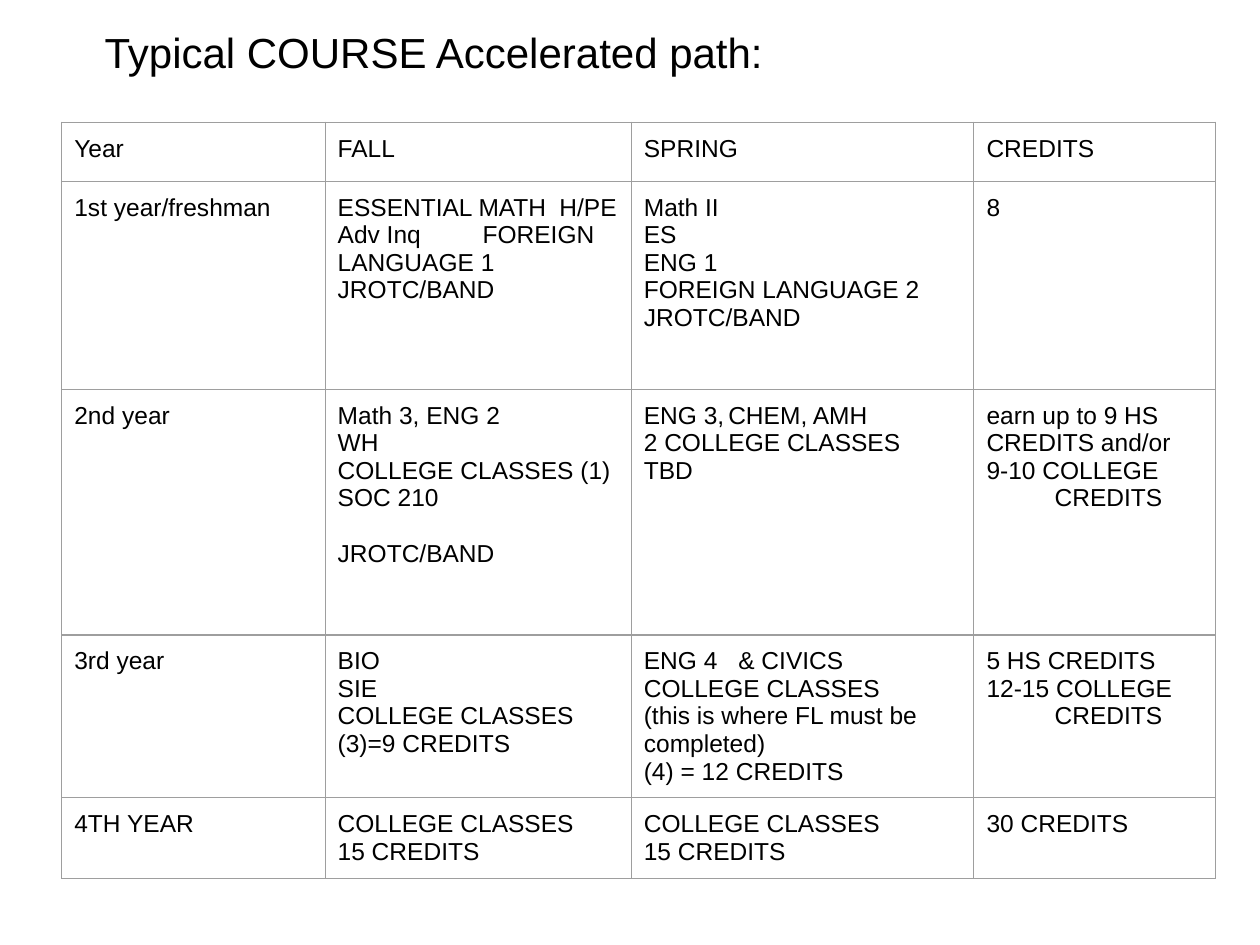
from pptx import Presentation
from pptx.dml.color import RGBColor
from pptx.enum.text import MSO_ANCHOR, MSO_AUTO_SIZE, PP_ALIGN
from pptx.oxml import parse_xml
from pptx.oxml.ns import nsdecls
from pptx.util import Inches, Pt

LEFT = PP_ALIGN.LEFT
TOP = MSO_ANCHOR.TOP
FIXED = MSO_AUTO_SIZE.NONE
BLACK = RGBColor(0x00, 0x00, 0x00)
GRAY = RGBColor(0x9E, 0x9E, 0x9E)
PAD = Inches(0.1)

COLS = [2.09, 2.43, 2.72, 1.92]
ROWS = [0.47, 1.65, 1.95, 1.29, 0.64]

SHIFTED = ("CREDITS", {"indent": 0.54})
COLLEGE = ["COLLEGE CLASSES", "15 CREDITS"]
PLAN = [
    [["Year"], ["FALL"], ["SPRING"], ["CREDITS"]],
    [
        ["1st year/freshman"],
        [
            ("ESSENTIAL MATH\tH/PE", {"tab": 1.76}),
            ("Adv Inq\tFOREIGN LANGUAGE 1", {"tab": 1.15}),
            "JROTC/BAND",
        ],
        ["Math II", "ES", "ENG 1", "FOREIGN LANGUAGE 2", "JROTC/BAND"],
        ["8"],
    ],
    [
        ["2nd year"],
        [
            "Math 3, ENG 2",
            "WH",
            "COLLEGE CLASSES (1) SOC 210",
            ("JROTC/BAND", {"before": 16}),
        ],
        [("ENG 3,\tCHEM, AMH", {"tab": 0.67}), "2 COLLEGE CLASSES", "TBD"],
        ["earn up to 9 HS CREDITS and/or", "9-10 COLLEGE", SHIFTED],
    ],
    [
        ["3rd year"],
        ["BIO", "SIE", "COLLEGE CLASSES", "(3)=9 CREDITS"],
        [
            ("ENG 4\t& CIVICS", {"tab": 0.75}),
            "COLLEGE CLASSES",
            "(this is where FL must be completed)",
            "(4) = 12 CREDITS",
        ],
        ["5 HS CREDITS", "12-15 COLLEGE", SHIFTED],
    ],
    [["4TH YEAR"], COLLEGE, COLLEGE, ["30 CREDITS"]],
]


def write(para, text, size=14, tab=None, indent=None, before=0):
    props = para._p.get_or_add_pPr()
    if tab:
        props.append(parse_xml(
            f'<a:tabLst {nsdecls("a")}>'
            f'<a:tab pos="{Inches(tab)}" algn="l"/></a:tabLst>'))
    if indent:
        props.set("marL", str(Inches(indent)))
    para.alignment = LEFT
    para.space_before = Pt(before)
    run = para.add_run()
    run.text = text
    font = run.font
    font.name = "Arial"
    font.size = Pt(size)
    font.bold = False
    font.color.rgb = BLACK


def pad(box):
    box.margin_left = box.margin_right = PAD
    box.margin_top = box.margin_bottom = PAD
    box.vertical_anchor = TOP


def frame(cell):
    props = cell._tc.get_or_add_tcPr()
    for spot, side in enumerate("LRTB"):
        props.insert(spot, parse_xml(
            f'<a:ln{side} {nsdecls("a")} w="{Pt(0.75)}"><a:solidFill>'
            f'<a:srgbClr val="{GRAY}"/></a:solidFill></a:ln{side}>'))


def fill_cell(cell, lines):
    pad(cell)
    cell.fill.background()
    frame(cell)
    body = cell.text_frame
    for spot, line in enumerate(lines):
        para = body.add_paragraph() if spot else body.paragraphs[0]
        text, form = (line, {}) if isinstance(line, str) else line
        write(para, text, **form)


def add_title(slide, text):
    title = slide.shapes.title
    title.left, title.top = Inches(0.73), Inches(0.11)
    title.width, title.height = Inches(6.84), Inches(0.74)
    body = title.text_frame
    body.auto_size = FIXED
    body.word_wrap = True
    pad(body)
    write(body.paragraphs[0], text, size=24)


def add_plan(slide):
    table = slide.shapes.add_table(
        len(ROWS), len(COLS), Inches(0.49), Inches(0.97),
        Inches(sum(COLS)), Inches(sum(ROWS))).table
    table.first_row = False
    table.horz_banding = False
    for col, width in zip(table.columns, COLS):
        col.width = Inches(width)
    for row, height, cells in zip(table.rows, ROWS, PLAN):
        row.height = Inches(height)
        for cell, lines in zip(row.cells, cells):
            fill_cell(cell, lines)


def main():
    deck = Presentation()
    deck.slide_width, deck.slide_height = Inches(10), Inches(7.5)
    slide = deck.slides.add_slide(deck.slide_layouts[5])
    add_title(slide, "Typical COURSE Accelerated path:")
    add_plan(slide)
    deck.save("out.pptx")


if __name__ == "__main__":
    main()
